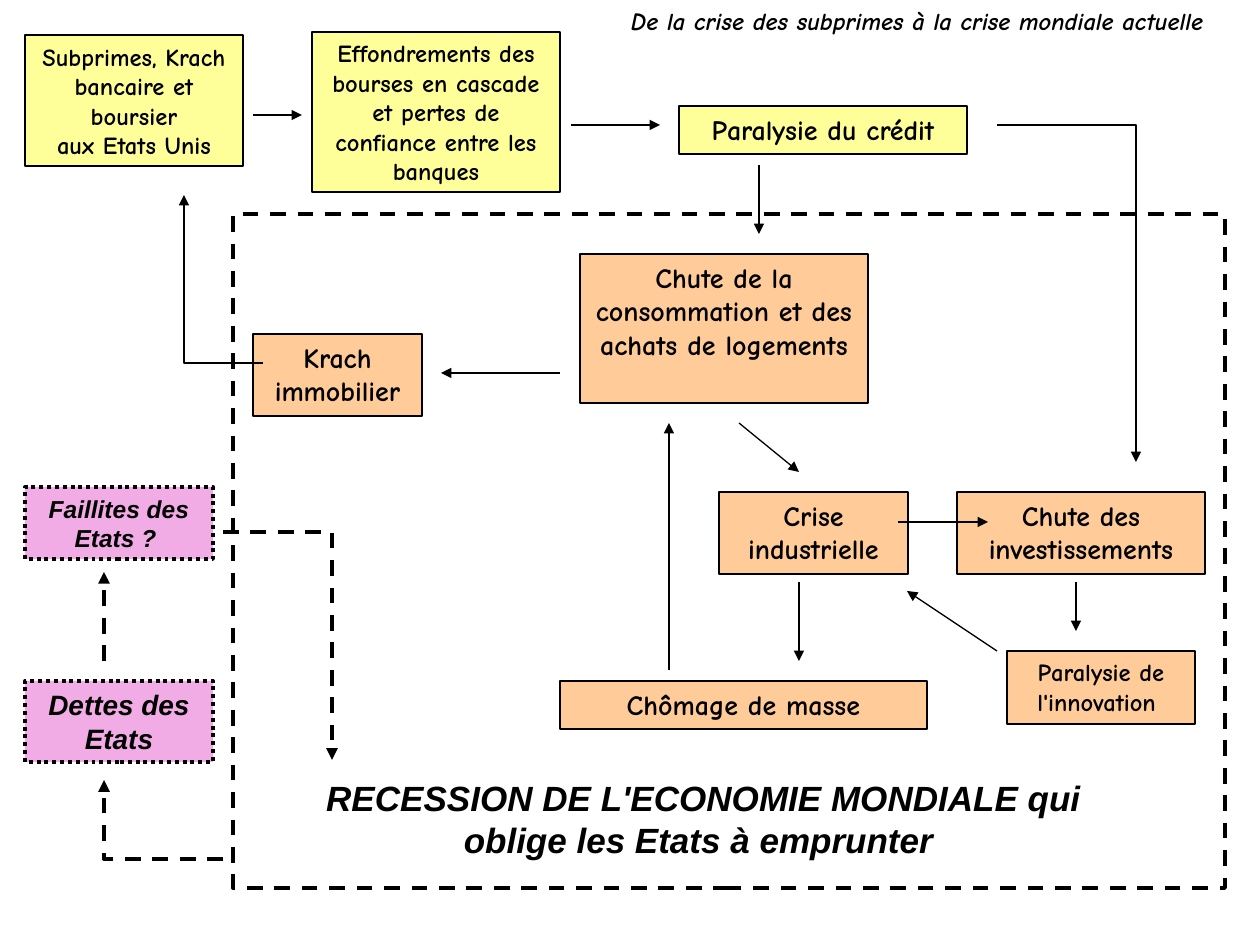
from dataclasses import dataclass

import lxml.etree
import pptx
import pptx.dml.color
import pptx.enum.dml
import pptx.enum.shapes
import pptx.enum.text
import pptx.oxml.ns
import pptx.util

SCALE = 914400 / 126  # EMU per px

DASH = pptx.enum.dml.MSO_LINE.DASH
DOTS = pptx.enum.dml.MSO_LINE.ROUND_DOT
TOP = pptx.enum.text.MSO_ANCHOR.TOP
MIDDLE = pptx.enum.text.MSO_ANCHOR.MIDDLE


@dataclass(frozen=True)
class Theme:
    ink: str = "000000"
    finance: str = "FFFF99"
    economy: str = "FFCC99"
    state: str = "F2ACE5"
    hand_font: str = "Comic Neue"
    plain_font: str = "Arial"
    small: int = 14
    medium: int = 16
    large: int = 20
    thin: float = 0.75
    thick: float = 2.25


THEME = Theme()

# text, (left, top, width, height), type size, anchor
FINANCE_BOXES = [
    ("Subprimes, Krach bancaire et boursier\naux Etats Unis", (25, 35, 218, 131), THEME.small, MIDDLE),
    ("Effondrements des bourses en cascade et pertes de confiance entre les banques",
     (312, 32, 248, 160), THEME.small, MIDDLE),
    ("Paralysie du crédit", (679, 106, 288, 48), THEME.medium, TOP),
]
ECONOMY_BOXES = [
    ("Chute de la consommation et des achats de logements", (580, 254, 288, 149), THEME.medium, TOP),
    ("Krach immobilier", (253, 334, 169, 82), THEME.medium, TOP),
    ("Crise industrielle", (719, 492, 189, 82), THEME.medium, TOP),
    ("Chute des investissements", (957, 492, 248, 82), THEME.medium, TOP),
    ("Paralysie de l'innovation ", (1007, 651, 188, 73), THEME.small, TOP),
    ("Chômage de masse", (560, 681, 367, 48), THEME.medium, TOP),
]
STATE_BOXES = [
    ("Faillites des Etats ? ", (25, 487, 188, 72), THEME.small, MIDDLE),
    ("Dettes des Etats", (25, 681, 188, 81), THEME.medium, MIDDLE),
]
CRISIS_ARROWS = [
    [(253, 115), (302, 115)],
    [(571, 125), (660, 125)],
    [(759, 165), (759, 234)],
    [(560, 373), (441, 373)],
    [(739, 423), (799, 472)],
    [(898, 522), (988, 522)],
    [(799, 582), (799, 661)],
    [(669, 670), (669, 423)],
    [(1076, 582), (1076, 631)],
    [(997, 651), (907, 591)],
    [(997, 125), (1136, 125), (1136, 462)],
    [(263, 363), (184, 363), (184, 195)],
]
STATE_ARROWS = [
    [(223, 859), (104, 859), (104, 780)],
    [(104, 661), (104, 572)],
    [(223, 532), (332, 532), (332, 760)],
]


def px(value):
    return pptx.util.Emu(round(value * SCALE))


def color(value):
    return pptx.dml.color.RGBColor.from_string(value)


def style_line(line, width, dash=None):
    line.color.rgb = color(THEME.ink)
    line.width = pptx.util.Pt(width)
    if dash is not None:
        line.dash_style = dash


def write_text(shape, text, size, font, italic=False, anchor=TOP, wrap=True):
    frame = shape.text_frame
    frame.word_wrap = wrap
    frame.auto_size = pptx.enum.text.MSO_AUTO_SIZE.SHAPE_TO_FIT_TEXT
    frame.vertical_anchor = anchor
    for index, line in enumerate(text.split("\n")):
        paragraph = frame.add_paragraph() if index else frame.paragraphs[0]
        paragraph.alignment = pptx.enum.text.PP_ALIGN.CENTER
        run = paragraph.add_run()
        run.text = line
        run.font.name = font
        run.font.size = pptx.util.Pt(size)
        run.font.bold = True
        run.font.italic = italic
        run.font.color.rgb = color(THEME.ink)


def add_rectangle(slide, bounds, fill, width, dash=None):
    shape = slide.shapes.add_shape(
        pptx.enum.shapes.MSO_SHAPE.RECTANGLE, *map(px, bounds))
    shape.shadow.inherit = False
    if fill:
        shape.fill.solid()
        shape.fill.fore_color.rgb = color(fill)
    else:
        shape.fill.background()
    style_line(shape.line, width, dash)
    return shape


def add_crisis_boxes(slide, boxes, fill):
    for text, bounds, size, anchor in boxes:
        shape = add_rectangle(slide, bounds, fill, THEME.thin)
        write_text(shape, text, size, THEME.hand_font, anchor=anchor)


def add_state_boxes(slide):
    for text, bounds, size, anchor in STATE_BOXES:
        shape = add_rectangle(slide, bounds, THEME.state, THEME.thick, DOTS)
        write_text(shape, text, size, THEME.plain_font, True, anchor)


def add_label(slide, text, bounds, size, font, wrap=True):
    label = slide.shapes.add_textbox(*map(px, bounds))
    write_text(label, text, size, font, italic=True, wrap=wrap)


def add_straight_line(slide, start, end):
    connector = slide.shapes.add_connector(
        pptx.enum.shapes.MSO_CONNECTOR.STRAIGHT, *map(px, start + end))
    properties = connector.element.spPr
    lxml.etree.SubElement(properties, pptx.oxml.ns.qn("a:effectLst"))
    return connector


def add_bent_line(slide, points):
    start, *others = [tuple(map(px, point)) for point in points]
    builder = slide.shapes.build_freeform(*start)
    builder.add_line_segments(others, close=False)
    shape = builder.convert_to_shape()
    shape.shadow.inherit = False
    shape.fill.background()
    return shape


def add_arrow(slide, points, width, dash=None):
    """Draw an arrow through the points, with its head at the last one."""
    if len(points) == 2:
        arrow = add_straight_line(slide, *points)
    else:
        arrow = add_bent_line(slide, points)
    style_line(arrow.line, width, dash)
    outline = arrow.line.get_or_add_ln() if hasattr(arrow.line, "get_or_add_ln") else arrow.get_or_add_ln()
    lxml.etree.SubElement(outline, pptx.oxml.ns.qn("a:tailEnd"), type="triangle")


def main():
    presentation = pptx.Presentation()
    presentation.slide_width = px(1260)
    presentation.slide_height = px(945)
    slide = presentation.slides.add_slide(presentation.slide_layouts[6])

    add_crisis_boxes(slide, FINANCE_BOXES, THEME.finance)
    add_crisis_boxes(slide, ECONOMY_BOXES, THEME.economy)
    for points in CRISIS_ARROWS:
        add_arrow(slide, points, THEME.thin)

    add_rectangle(slide, (233, 214, 992, 674), None, THEME.thick, DASH)
    add_label(slide, "RECESSION DE L'ECONOMIE MONDIALE qui oblige les Etats à emprunter ",
              (272, 770, 863, 97), THEME.large, THEME.plain_font)
    add_state_boxes(slide)
    for points in STATE_ARROWS:
        add_arrow(slide, points, THEME.thick, DASH)
    add_label(slide, "De la crise des subprimes à la crise mondiale actuelle",
              (580, 0, 675, 43), THEME.small, THEME.hand_font, wrap=False)

    presentation.save("out.pptx")


if __name__ == "__main__":
    main()
